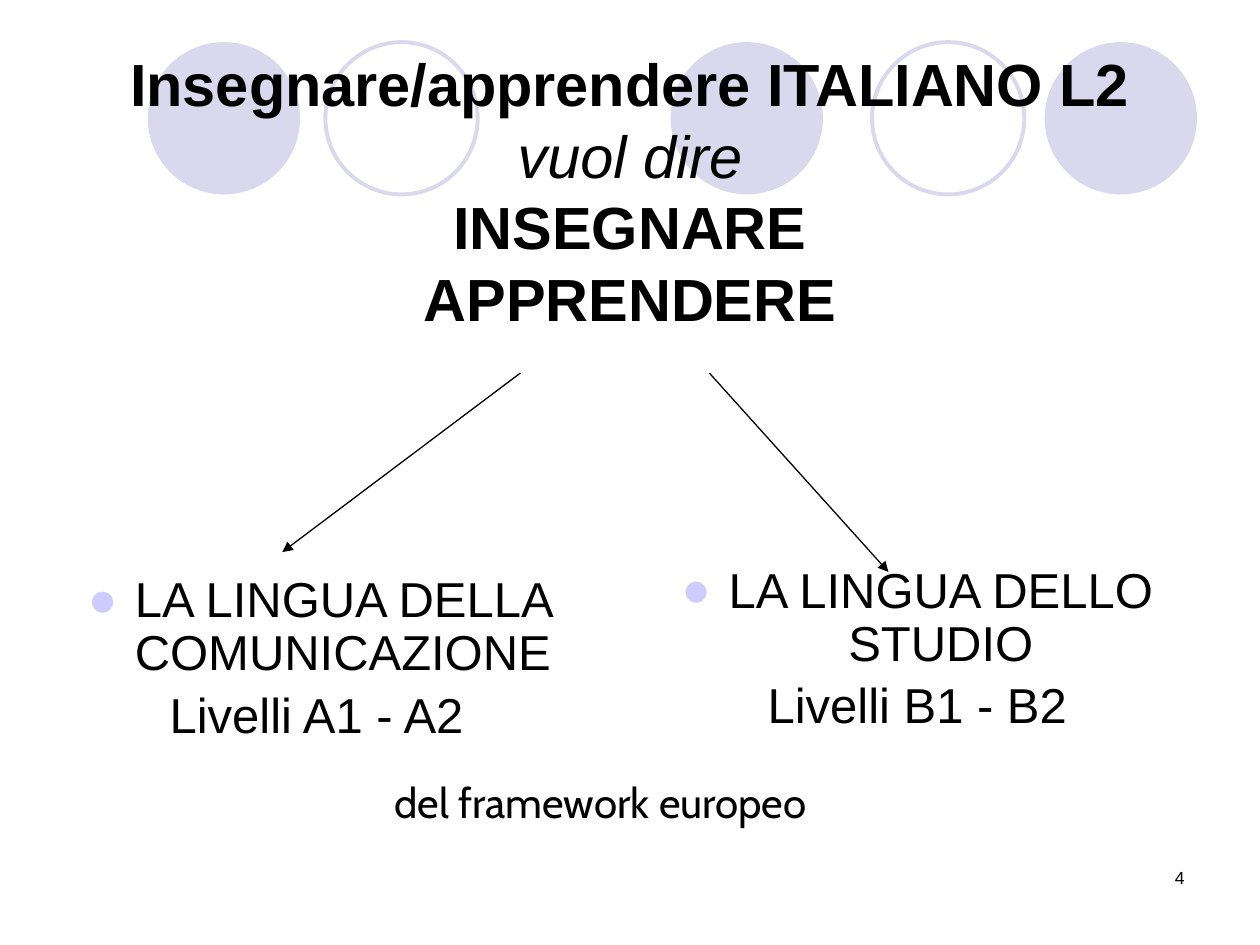
import pptx
import pptx.util
import pptx.dml.color
import pptx.enum.shapes
import pptx.enum.text
import pptx.oxml
import pptx.oxml.ns

Cm = pptx.util.Cm
Pt = pptx.util.Pt
RGB = pptx.dml.color.RGBColor
Align = pptx.enum.text.PP_ALIGN
Anchor = pptx.enum.text.MSO_ANCHOR
BLACK = RGB(0x00, 0x00, 0x00)
LILAC = RGB(0xD9, 0xD8, 0xEC)
DOT = RGB(0xCC, 0xCC, 0xFF)
HANG = 0.95


def add_xml(parent, tag, body="", **attrs):
    pairs = " ".join(f'{key}="{val}"' for key, val in attrs.items())
    name = pptx.oxml.ns.nsdecls("a")
    node = pptx.oxml.parse_xml(f"<a:{tag} {name} {pairs}>{body}</a:{tag}>")
    parent.append(node)


def write(frame, text, new=False, size=28, font="Arial", bold=False,
          italic=False, align=Align.LEFT, before=0, line=None,
          left=0, first=0, bullet=False):
    para = frame.add_paragraph() if new else frame.paragraphs[0]
    para.alignment = align
    para.space_before = Pt(before)
    if line:
        para.line_spacing = line
    props = para._p.get_or_add_pPr()
    props.set("marL", str(Cm(left)))
    props.set("indent", str(Cm(first)))
    if bullet:
        add_xml(props, "buClr", f'<a:srgbClr val="{DOT}"/>')
        add_xml(props, "buFont", typeface="Arial")
        add_xml(props, "buChar", char="●")
    parts = [(text, bold, italic)] if isinstance(text, str) else text
    for index, (words, strong, slant) in enumerate(parts):
        if index:
            para.add_line_break()
        run = para.add_run()
        run.text = words
        run.font.size = Pt(size)
        run.font.name = font
        run.font.bold = strong
        run.font.italic = slant
        run.font.color.rgb = BLACK


def add_box(slide, x, y, wide, high, anchor=Anchor.TOP):
    frame = slide.shapes.add_textbox(Cm(x), Cm(y), Cm(wide), Cm(high)).text_frame
    frame.word_wrap = True
    frame.vertical_anchor = anchor
    return frame


def add_rings(slide, x, y, size):
    discs = [(10.54, True), (18.08, True), (0, True), (14.6, False), (3.58, False)]
    for shift, solid in discs:
        ring = slide.shapes.add_shape(
            pptx.enum.shapes.MSO_SHAPE.OVAL, Cm(x + shift), Cm(y), Cm(size), Cm(size))
        ring.shadow.inherit = False
        if solid:
            ring.fill.solid()
            ring.fill.fore_color.rgb = LILAC
            ring.line.fill.background()
        else:
            ring.fill.background()
            ring.line.color.rgb = LILAC
            ring.line.width = Pt(2.25)


def add_title(slide, x, y, wide, high):
    frame = add_box(slide, x, y, wide, high, Anchor.MIDDLE)
    lines = [("Insegnare/apprendere ITALIANO L2", True, False),
             ("vuol dire", False, True),
             ("INSEGNARE", True, False),
             ("APPRENDERE", True, False)]
    write(frame, lines, size=34, align=Align.CENTER)


def add_topic(slide, x, y, wide, high, head, level, align, left, first):
    frame = add_box(slide, x, y, wide, high)
    write(frame, head, align=align, before=5.6, line=0.9,
          left=HANG, first=-HANG, bullet=True)
    write(frame, level, new=True, align=align, before=5.6, line=0.9,
          left=left, first=first)


def add_arrow(slide, x, y, wide, high):
    arrow = slide.shapes.add_connector(
        pptx.enum.shapes.MSO_CONNECTOR.STRAIGHT,
        Cm(x), Cm(y), Cm(x + wide), Cm(y + high))
    arrow.line.color.rgb = BLACK
    arrow.line.width = Pt(0.75)
    add_xml(arrow.line._get_or_add_ln(), "tailEnd", type="triangle")
    add_xml(arrow._element.spPr, "effectLst")


def add_foot(slide, x, y, wide, high):
    frame = add_box(slide, x, y, wide, high)
    write(frame, "del framework europeo", size=24, font="Cabin",
          align=Align.CENTER, before=12)


def add_number(slide, x, y, wide, high):
    write(add_box(slide, x, y, wide, high), "4", size=10, align=Align.RIGHT)


def main():
    deck = pptx.Presentation()
    deck.slide_width = Cm(25.4)
    deck.slide_height = Cm(19.05)
    slide = deck.slides.add_slide(deck.slide_layouts[6])
    add_rings(slide, 2.98, 0.85, 3.07)
    add_number(slide, 18.21, 17.35, 5.92, 1.27)
    add_title(slide, 1.27, 0.76, 22.86, 6.15)
    add_topic(slide, 1.52, 11.48, 10.82, 3.68, "LA LINGUA DELLA COMUNICAZIONE",
              "Livelli A1 - A2", Align.LEFT, 1.65, 0)
    add_topic(slide, 13.08, 11.28, 10.82, 3.68, "LA LINGUA DELLO STUDIO",
              "Livelli B1 - B2", Align.CENTER, HANG, -HANG)
    add_arrow(slide, 10.49, 7.52, -4.8, 3.61)
    add_arrow(slide, 14.3, 7.52, 3.61, 4.01)
    add_foot(slide, 6.1, 15.52, 12.01, 1.27)
    deck.save("out.pptx")


if __name__ == "__main__":
    main()
